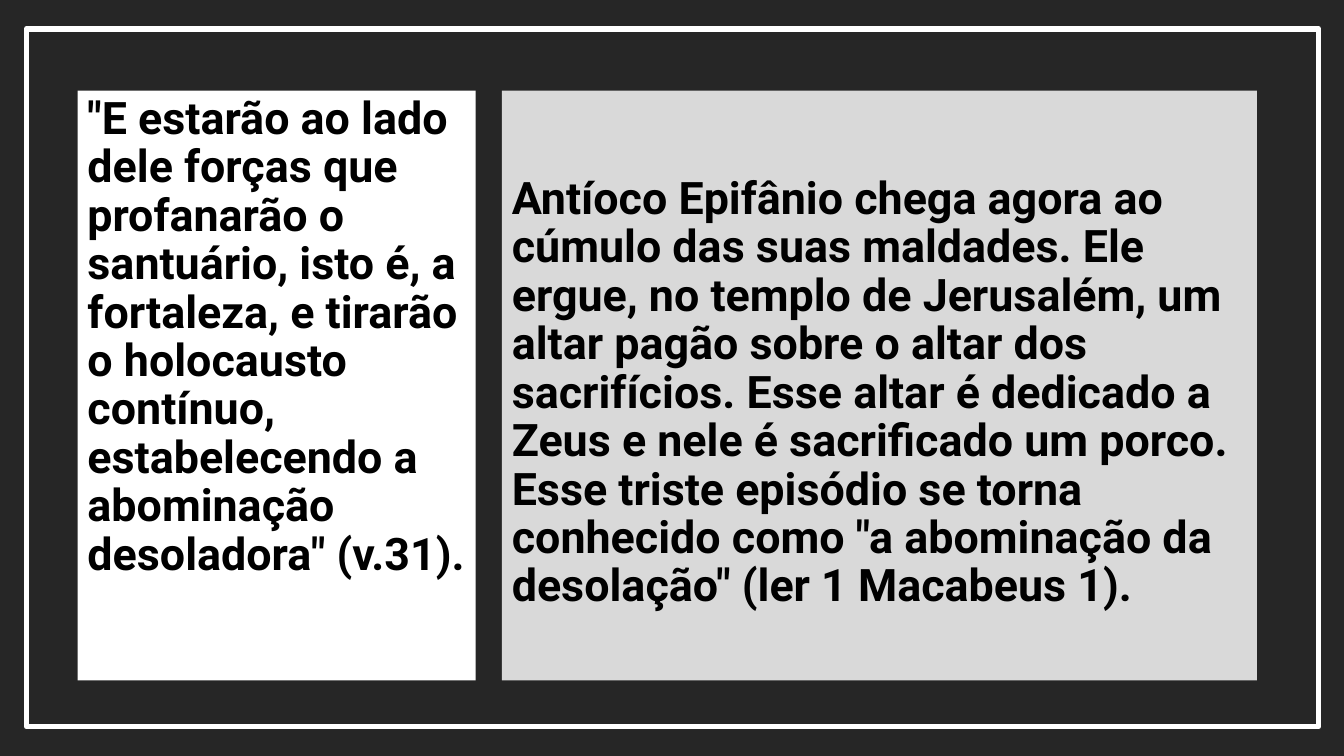
from pptx import Presentation
from pptx.dml.color import RGBColor
from pptx.enum.shapes import MSO_SHAPE
from pptx.enum.text import MSO_ANCHOR, PP_ALIGN
from pptx.util import Pt

RECTANGLE = MSO_SHAPE.RECTANGLE
TOP = MSO_ANCHOR.TOP
LEFT = PP_ALIGN.LEFT

CHARCOAL = RGBColor(0x26, 0x26, 0x26)
WHITE = RGBColor(0xFF, 0xFF, 0xFF)
GRAY = RGBColor(0xD9, 0xD9, 0xD9)
BLACK = RGBColor(0x00, 0x00, 0x00)

PAGE_WIDTH, PAGE_HEIGHT = 960, 540
PANEL_TOP, PANEL_HEIGHT = 64.8, 421.2

VERSE = (
    '"E estarão ao lado dele forças que profanarão o santuário, isto é, '
    "a fortaleza, e tirarão o holocausto contínuo, estabelecendo a "
    'abominação desoladora" (v.31).'
)
COMMENTARY = (
    "Antíoco Epifânio chega agora ao cúmulo das suas maldades. Ele ergue, "
    "no templo de Jerusalém, um altar pagão sobre o altar dos sacrifícios. "
    "Esse altar é dedicado a Zeus e nele é sacrificado um porco. Esse triste "
    'episódio se torna conhecido como "a abominação da desolação" '
    "(ler 1 Macabeus 1)."
)


def write_text(box, text, *, font="Roboto", size=32, color=BLACK, bold=True,
               spacing=0.9, inset_top=3.6):
    frame = box.text_frame
    frame.word_wrap = True
    frame.vertical_anchor = TOP
    frame.margin_left = frame.margin_right = Pt(7.2)
    frame.margin_top = Pt(inset_top)
    frame.margin_bottom = Pt(3.6)
    para = frame.paragraphs[0]
    para.alignment = LEFT
    para.line_spacing = spacing
    span = para.add_run()
    span.text = text
    span.font.name = font
    span.font.size = Pt(size)
    span.font.bold = bold
    span.font.color.rgb = color


class SlideBuilder:
    def __init__(self, page):
        self.page = page

    def rectangle(self, left, top, width, height, fill=None, line=None,
                  line_width=4):
        box = self.page.shapes.add_shape(
            RECTANGLE, Pt(left), Pt(top), Pt(width), Pt(height))
        box.shadow.inherit = False
        if fill is None:
            box.fill.background()
        else:
            box.fill.solid()
            box.fill.fore_color.rgb = fill
        if line is None:
            box.line.fill.background()
        else:
            box.line.color.rgb = line
            box.line.width = Pt(line_width)
        return box

    def panel(self, left, width, fill, text, **style):
        box = self.rectangle(left, PANEL_TOP, width, PANEL_HEIGHT, fill)
        write_text(box, text, **style)


def main():
    deck = Presentation()
    deck.slide_width = Pt(PAGE_WIDTH)
    deck.slide_height = Pt(PAGE_HEIGHT)
    builder = SlideBuilder(deck.slides.add_slide(deck.slide_layouts[6]))
    builder.rectangle(0, 0, PAGE_WIDTH, PAGE_HEIGHT, fill=CHARCOAL)
    builder.rectangle(18.9, 20.7, 923, 498.4, line=WHITE)
    builder.panel(55.4, 284.4, WHITE, VERSE)
    builder.panel(358.5, 539.3, GRAY, COMMENTARY, inset_top=60.8)
    deck.save("out.pptx")


if __name__ == "__main__":
    main()
